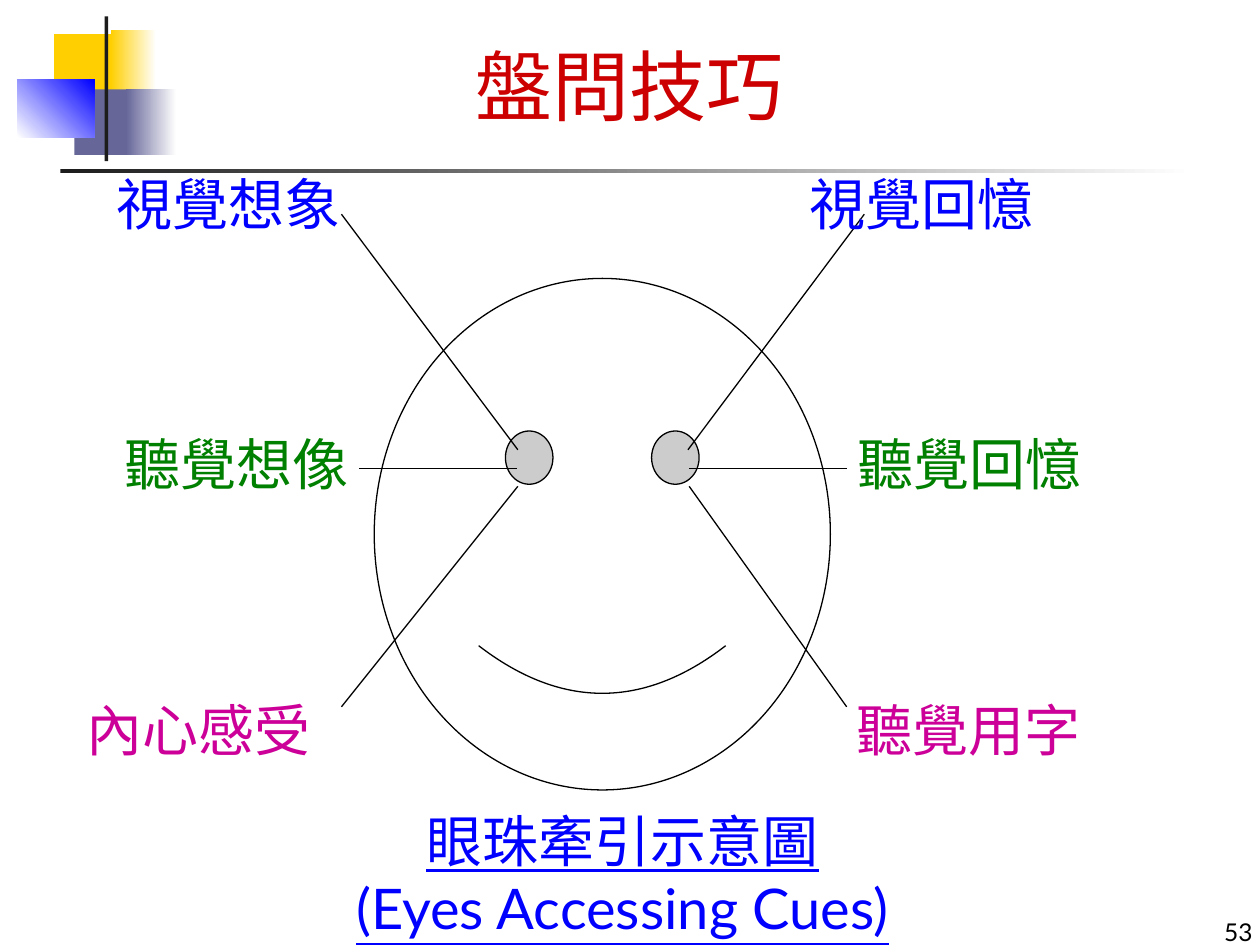
import pptx
import pptx.util
import pptx.dml.color
import pptx.enum.shapes
import pptx.enum.text
import pptx.oxml.ns
from lxml import etree

Inches, Pt = pptx.util.Inches, pptx.util.Pt
RGB = pptx.dml.color.RGBColor
SHAPE = pptx.enum.shapes.MSO_SHAPE
ALIGN = pptx.enum.text.PP_ALIGN
ANCHOR = pptx.enum.text.MSO_ANCHOR
qn = pptx.oxml.ns.qn

YELLOW, SLATE, BLUE = RGB(255, 207, 1), RGB(102, 102, 153), RGB(0, 0, 255)
INK, WHITE, BLACK = RGB(28, 28, 28), RGB(255, 255, 255), RGB(0, 0, 0)
RED, GREEN, MAGENTA = RGB(204, 0, 0), RGB(0, 128, 0), RGB(204, 0, 153)
CJK, LATIN = "Noto Sans CJK SC", "Lato"

TITLE = "盤問技巧"
CAPTION = ["眼珠牽引示意圖", "(Eyes Accessing Cues)"]
PAGE_NUMBER = "53"

DECORATIONS = [
    ((0.43, 0.27, 0.48, 0.52), [YELLOW], 0),
    ((0.88, 0.24, 0.36, 0.52), [YELLOW, WHITE], 0),
    ((0.59, 0.71, 0.46, 0.52), [SLATE], 0),
    ((1, 0.71, 0.4, 0.52), [SLATE, WHITE], 0),
    ((0.14, 0.63, 0.61, 0.46), [WHITE, BLUE], 45),
    ((0.83, 0.13, 0.03, 1.15), [INK], 0),
    ((0.48, 1.34, 9, 0.03), [INK, WHITE], 0),
]
FACE = (2.97, 2.21, 3.62, 4.06)
SIGHT_LINES = [
    ((4.11, 3.57), (2.71, 1.7)),
    ((5.46, 3.57), (6.86, 1.7)),
    ((4.1, 3.72), (2.85, 3.72)),
    ((5.47, 3.72), (6.72, 3.72)),
    ((4.11, 3.86), (2.71, 5.61)),
    ((5.47, 3.86), (6.72, 5.61)),
]
CUE_ROWS = [
    (1.3, BLUE, [(0.83, "視覺想象"), (6.33, "視覺回憶")]),
    (3.36, GREEN, [(0.89, "聽覺想像"), (6.71, "聽覺回憶")]),
    (5.47, MAGENTA, [(0.59, "內心感受"), (6.7, "聽覺用字")]),
]
CUE_SIZE = (2.3, 0.64)


def inches(values):
    return [Inches(value) for value in values]


def write(frame, lines, color, size, font=CJK, align=ALIGN.LEFT,
          anchor=ANCHOR.TOP, underline=False):
    frame.word_wrap = True
    frame.vertical_anchor = anchor
    style = {"name": font, "size": Pt(size), "underline": underline, "bold": False}
    for index, line in enumerate(lines):
        paragraph = frame.add_paragraph() if index else frame.paragraphs[0]
        paragraph.alignment = align
        run = paragraph.add_run()
        run.text = line
        for attribute, value in style.items():
            setattr(run.font, attribute, value)
        run.font.color.rgb = color
        east_asian = etree.Element(qn("a:ea"), typeface=CJK)
        run.font._element.find(qn("a:latin")).addnext(east_asian)


def add_decoration(slide, box, colors, angle):
    block = slide.shapes.add_shape(SHAPE.RECTANGLE, *inches(box))
    block.shadow.inherit = False
    block.line.fill.background()
    if len(colors) == 1:
        block.fill.solid()
        block.fill.fore_color.rgb = colors[0]
        return
    block.fill.gradient()
    block.fill.gradient_angle = angle
    for stop, color in zip(block.fill.gradient_stops, colors):
        stop.color.rgb = color


def add_face(slide):
    face = slide.shapes.add_shape(SHAPE.SMILEY_FACE, *inches(FACE))
    face.adjustments[0] = 0.047
    face.shadow.inherit = False
    face.fill.solid()
    face.fill.fore_color.rgb = WHITE
    face.line.color.rgb = BLACK
    face.line.width = Pt(0.75)


def add_sight_line(slide, eye, cue):
    sight = slide.shapes.add_connector(
        pptx.enum.shapes.MSO_CONNECTOR.STRAIGHT, *inches(eye + cue))
    sight.line.color.rgb = BLACK
    sight.line.width = Pt(0.75)
    etree.SubElement(sight._element.spPr, qn("a:effectLst"))


def add_text(slide, box, lines, color, size, **style):
    frame = slide.shapes.add_textbox(*inches(box)).text_frame
    write(frame, lines, color, size, **style)


def main():
    deck = pptx.Presentation()
    deck.slide_width, deck.slide_height = Inches(10), Inches(7.5)
    slide = deck.slides.add_slide(deck.slide_layouts[5])

    for decoration in DECORATIONS:
        add_decoration(slide, *decoration)

    title = slide.shapes.title
    title.left, title.top, title.width, title.height = inches((0.5, 0.23, 9, 0.89))
    write(title.text_frame, [TITLE], RED, 44, align=ALIGN.CENTER, anchor=ANCHOR.MIDDLE)

    add_face(slide)
    for eye, cue in SIGHT_LINES:
        add_sight_line(slide, eye, cue)
    for top, color, cues in CUE_ROWS:
        for left, cue in cues:
            add_text(slide, (left, top) + CUE_SIZE, [cue], color, 32)

    add_text(slide, (2.44, 6.35, 5, 1.18), CAPTION, BLUE, 32,
             font=LATIN, align=ALIGN.CENTER, underline=True)
    add_text(slide, (7.96, 7.06, 2.08, 0.5), [PAGE_NUMBER], BLACK, 14,
             font=LATIN, align=ALIGN.RIGHT, anchor=ANCHOR.BOTTOM)
    deck.save("out.pptx")


if __name__ == "__main__":
    main()
